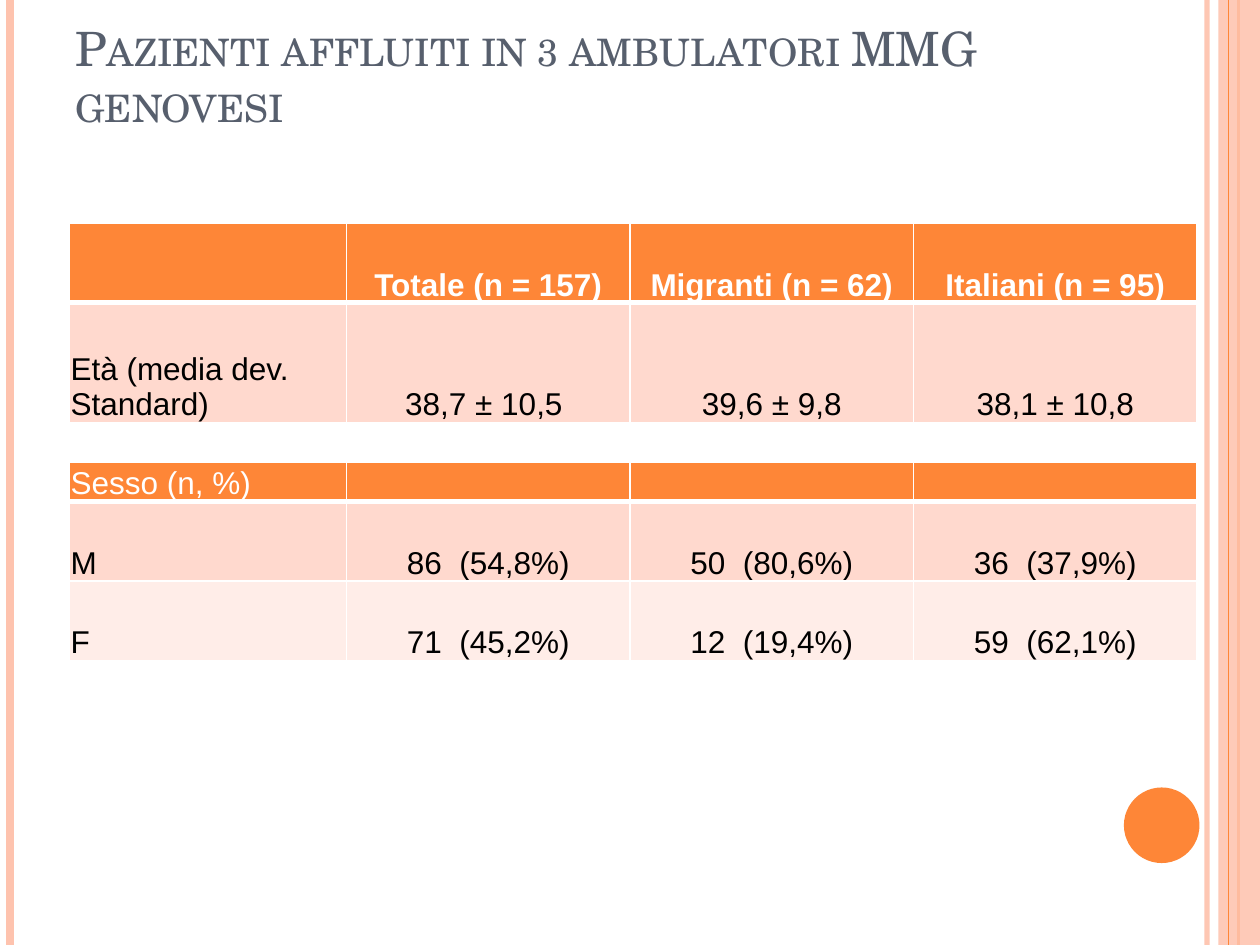
import pptx
import pptx.util
import pptx.dml.color
import pptx.enum.shapes
import pptx.enum.text
import pptx.oxml.ns
import lxml.etree
from dataclasses import dataclass

Pt = pptx.util.Pt
qn = pptx.oxml.ns.qn
Align = pptx.enum.text.PP_ALIGN
Anchor = pptx.enum.text.MSO_ANCHOR
Kind = pptx.enum.shapes.MSO_SHAPE


@dataclass(frozen=True)
class Theme:
    orange: str = "FE8637"
    peach: str = "FEC3AE"
    slate: str = "575F6D"
    white: str = "FFFFFF"
    black: str = "000000"
    bands: tuple = ("FFD9CE", "FFEDE8")
    serif: str = "TeX Gyre Schola"
    sans: str = "Arial"
    title: float = 27
    body: float = 18


THEME = Theme()


def rgb(code):
    return pptx.dml.color.RGBColor.from_string(code)


def fade(item, alpha):
    for color in item._element.spPr.iter(qn("a:srgbClr")):
        lxml.etree.SubElement(color, qn("a:alpha"), val=str(alpha * 1000))


def write(para, text, font, size, color, bold=False):
    run = para.add_run()
    run.text = text
    run.font.name = font
    run.font.size = Pt(size)
    run.font.bold = bold
    run.font.color.rgb = rgb(color)
    return run


def add_rule(slide, x, high, color, width):
    rule = slide.shapes.add_connector(
        pptx.enum.shapes.MSO_CONNECTOR.STRAIGHT, Pt(x), Pt(0), Pt(x), Pt(high))
    rule.line.color.rgb = rgb(color)
    rule.line.width = Pt(width)
    lxml.etree.SubElement(rule._element.spPr, qn("a:effectLst"))
    return rule


def add_solid(slide, kind, box, color):
    shape = slide.shapes.add_shape(kind, *map(Pt, box))
    shape.shadow.inherit = False
    shape.fill.solid()
    shape.fill.fore_color.rgb = rgb(color)
    shape.line.fill.background()
    return shape


def add_frame(slide, box):
    left, top, wide, high = box
    right = left + wide
    fade(add_rule(slide, right - 30.24, high, THEME.peach, 3), 93)
    add_rule(slide, left + 5.76, high, THEME.peach, 4.5)
    add_rule(slide, right - 12.24, high, THEME.orange, 1.5)
    band = (right - 23.76, top, 23.76, high)
    fade(add_solid(slide, Kind.RECTANGLE, band, THEME.peach), 87)
    add_rule(slide, right - 18, high, THEME.orange, 0.75)
    dot = (right - 77.76, top + 450, 43.2, 43.2)
    add_solid(slide, Kind.OVAL, dot, THEME.orange)


def add_title(slide, box, text):
    frame = slide.shapes.add_textbox(*map(Pt, box)).text_frame
    frame.word_wrap = True
    frame.vertical_anchor = Anchor.BOTTOM
    frame.margin_bottom = Pt(36)
    run = write(frame.paragraphs[0], text, THEME.serif, THEME.title, THEME.slate)
    run._r.get_or_add_rPr().set("cap", "small")


def edge(cell, base):
    props = cell._tc.get_or_add_tcPr()
    for spot, (side, width) in enumerate(
            (("lnL", 1), ("lnR", 1), ("lnT", 1), ("lnB", base))):
        line = lxml.etree.Element(qn(f"a:{side}"), w=str(Pt(width)))
        fill = lxml.etree.SubElement(line, qn("a:solidFill"))
        lxml.etree.SubElement(fill, qn("a:srgbClr"), val=THEME.white)
        props.insert(spot, line)


def fill_cell(cell, text, head, back, bold, first):
    cell.fill.solid()
    cell.fill.fore_color.rgb = rgb(back)
    edge(cell, 3 if head else 1)
    cell.vertical_anchor = Anchor.BOTTOM
    cell.margin_left = cell.margin_right = cell.margin_top = Pt(0.75)
    cell.margin_bottom = Pt(0)
    para = cell.text_frame.paragraphs[0]
    para.alignment = Align.LEFT if first else Align.CENTER
    if text:
        color = THEME.white if head else THEME.black
        write(para, text, THEME.sans, THEME.body, color, bold)
    else:
        end = lxml.etree.SubElement(
            para._p, qn("a:endParaRPr"), sz=str(THEME.body * 100))
        lxml.etree.SubElement(end, qn("a:latin"), typeface=THEME.sans)


def add_grid(slide, box, rows, highs, bold):
    left, top, wide = box
    cols = (158.4, 162, 162, 162)
    table = slide.shapes.add_table(
        len(rows), len(cols), Pt(left), Pt(top), Pt(wide), Pt(sum(highs))).table
    for col, size in zip(table.columns, cols):
        col.width = Pt(size)
    for i, (row, high) in enumerate(zip(rows, highs)):
        table.rows[i].height = Pt(high)
        head = i == 0
        back = THEME.orange if head else THEME.bands[(i - 1) % 2]
        for j, text in enumerate(row):
            fill_cell(table.cell(i, j), text, head, back, head and bold, j == 0)


def main():
    deck = pptx.Presentation()
    deck.slide_width, deck.slide_height = Pt(720), Pt(540)
    slide = deck.slides.add_slide(deck.slide_layouts[6])
    add_frame(slide, (0, 0, 720, 540))
    add_title(slide, (36, 21.6, 588, 90),
              "Pazienti affluiti in 3 ambulatori MMG genovesi")
    ages = (
        ("", "Totale (n = 157)", "Migranti (n = 62)", "Italiani (n = 95)"),
        ("Età (media dev. Standard)", "38,7 ± 10,5 ", "39,6 ± 9,8", "38,1 ± 10,8"),
    )
    sexes = (
        ("Sesso (n, %)", "", "", ""),
        ("M", "86  (54,8%)", "50  (80,6%)", "36  (37,9%)"),
        ("F", "71  (45,2%)", "12  (19,4%)", "59  (62,1%)"),
    )
    add_grid(slide, (39.6, 127.6, 644.4), ages, (45.4, 68.4), True)
    add_grid(slide, (39.6, 264.2, 644.4), sexes, (21, 45.4, 45.4), False)
    deck.save("out.pptx")


if __name__ == "__main__":
    main()
